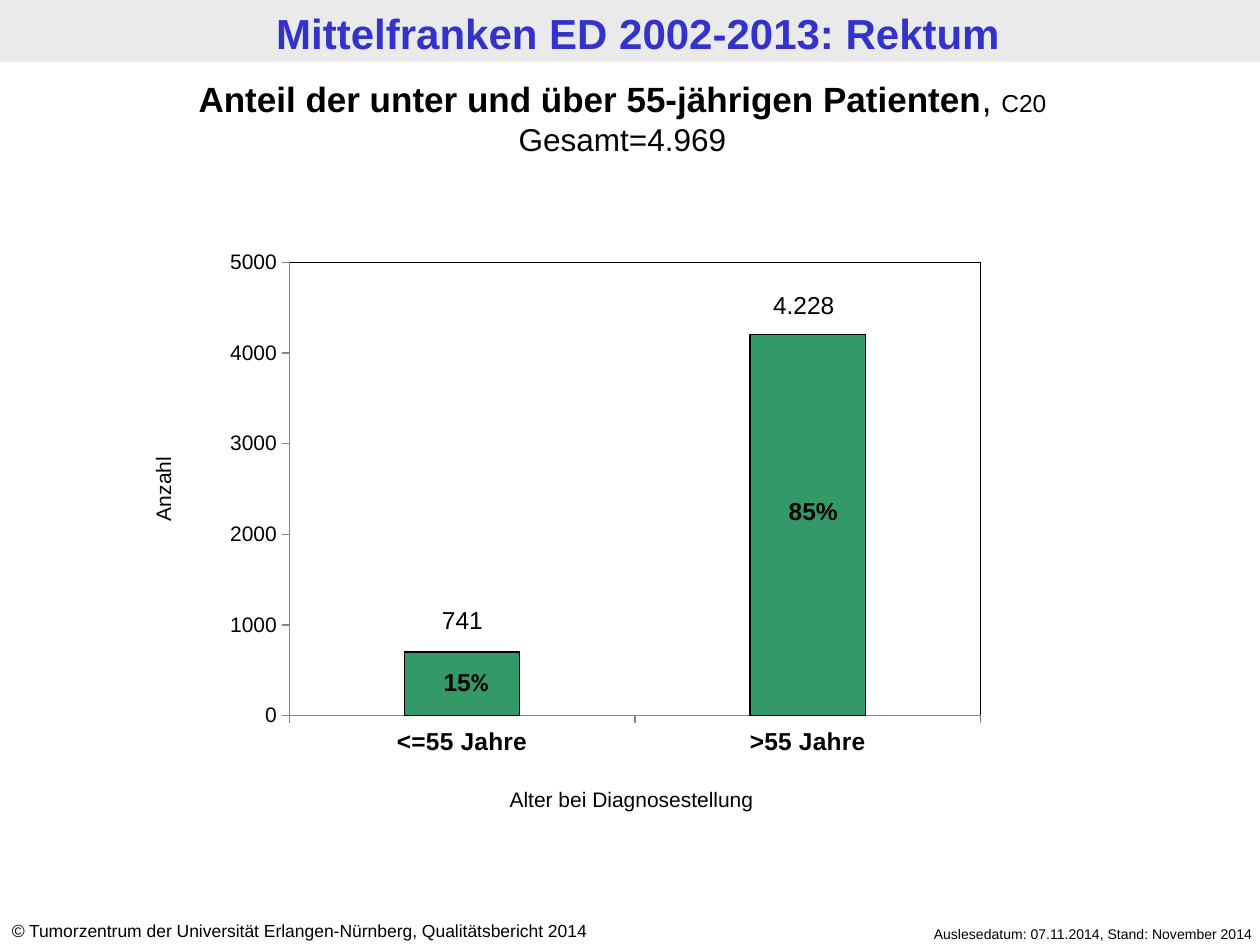
from pptx import Presentation
from pptx import util as u
from pptx.chart.data import CategoryChartData
from pptx.dml.color import RGBColor
from pptx.enum import chart as charts, shapes, text
from pptx.oxml import parse_xml
from pptx.oxml.ns import nsdecls, qn

Pt = u.Pt
LEFT, CENTER, RIGHT = text.PP_ALIGN.LEFT, text.PP_ALIGN.CENTER, text.PP_ALIGN.RIGHT
BLACK, GRAY = "000000", "868686"

# Each paragraph is a list of runs: (text, changes to the font of the box)
TEXTS = [
    # left, top, width, height, alignment, font, paragraphs
    (4.6, 0.7, 720, 35.3, CENTER, dict(size=24, bold=True, color="3333CC"),
     [[("Mittelfranken ED 2002-2013: Rektum", {})]]),
    (478.8, 525.2, 244.1, 17.3, RIGHT, dict(size=8),
     [[("Auslesedatum: 07.11.2014, Stand: November 2014", {})]]),
    (-0.4, 522.4, 377.3, 19.4, LEFT, dict(size=10),
     [[("©", dict(italic=True)),
       (" Tumorzentrum der Universität Erlangen-Nürnberg, Qualitätsbericht 2014", {})]]),
    (0, 41, 711.4, 53.3, CENTER, dict(size=20),
     [[("Anteil der unter und über 55-jährigen Patienten", dict(bold=True)),
       (", ", {}), ("C20", dict(size=14))],
      [("Gesamt=4.969", dict(size=18))]]),
    (229.7, 377.7, 73.4, 24.5, CENTER, dict(size=14, bold=True),
     [[("15", {}), ("%", dict(name="Calibri"))]]),
    (428, 280.1, 73.4, 24.5, CENTER, dict(size=14, bold=True), [[("85%", {})]]),
    (241, 445.7, 239.8, 21.6, CENTER, dict(size=12),
     [[("Alter bei Diagnosestellung", {})]]),
    (227.5, 342, 73.4, 24.5, CENTER, dict(size=14), [[("741", {})]]),
    (422.6, 162, 73.4, 24.5, CENTER, dict(size=14), [[("4.228", {})]]),
]
AXIS_TITLE = (-0.9, 268.6, 187.9, 21.6, CENTER, dict(size=12), [[("Anzahl", {})]])

CATEGORIES = ["<=55 Jahre", ">55 Jahre"]
COUNTS = [700, 4200]
CHART_FRAME = (108.5, 102.3, 502.6, 335.5)
PLOT = dict(x=0.113, y=0.142, w=0.786, h=0.772)  # shares of the chart frame


def rgb(value):
    return RGBColor.from_string(value)


def style_font(font, size=None, bold=None, italic=None, color=None, name=None):
    if size:
        font.size = Pt(size)
    if bold is not None:
        font.bold = bold
    if italic is not None:
        font.italic = italic
    if color:
        font.color.rgb = rgb(color)
    if name:
        font.name = name


def add_text(slide, left, top, width, height, alignment, font, paragraphs):
    box = slide.shapes.add_textbox(Pt(left), Pt(top), Pt(width), Pt(height))
    frame = box.text_frame
    frame.word_wrap = True
    base = {"name": "Arial", "color": BLACK, **font}
    for index, runs in enumerate(paragraphs):
        paragraph = frame.add_paragraph() if index else frame.paragraphs[0]
        paragraph.alignment = alignment
        style_font(paragraph.font, **base)
        for words, changes in runs:
            run = paragraph.add_run()
            run.text = words
            style_font(run.font, **changes)
    return box


def frame_plot(chart):
    """Fix the inner plot area and outline it in black."""
    plot_area = chart._chartSpace.chart.plotArea
    for old in plot_area.findall(qn("c:layout")):
        plot_area.remove(old)
    places = "".join(f'<c:{key} val="{value}"/>' for key, value in PLOT.items())
    plot_area.insert(0, parse_xml(
        f'<c:layout {nsdecls("c")}><c:manualLayout><c:layoutTarget val="inner"/>'
        f'<c:xMode val="edge"/><c:yMode val="edge"/>{places}'
        '</c:manualLayout></c:layout>'))
    plot_area.append(parse_xml(
        f'<c:spPr {nsdecls("c", "a")}><a:noFill/><a:ln w="9525"><a:solidFill>'
        f'<a:srgbClr val="{BLACK}"/></a:solidFill></a:ln></c:spPr>'))


def add_age_chart(slide):
    data = CategoryChartData()
    data.categories = CATEGORIES
    data.add_series("Series 1", COUNTS)
    chart = slide.shapes.add_chart(
        charts.XL_CHART_TYPE.COLUMN_STACKED, *map(Pt, CHART_FRAME), data).chart
    chart.has_legend = chart.has_title = False
    style_font(chart.font, size=18, color=BLACK, name="Calibri")

    plot = chart.plots[0]
    plot.gap_width, plot.overlap, plot.vary_by_categories = 200, 100, False
    series = plot.series[0].format
    series.fill.solid()
    series.fill.fore_color.rgb = rgb("339966")
    series.line.color.rgb = rgb(BLACK)
    series.line.width = Pt(0.75)

    for axis, size, bold in ((chart.category_axis, 14, True), (chart.value_axis, 12, False)):
        axis.has_major_gridlines = False
        axis.major_tick_mark = charts.XL_TICK_MARK.OUTSIDE
        axis.format.line.color.rgb = rgb(GRAY)
        axis.format.line.width = Pt(0.75)
        style_font(axis.tick_labels.font, size, bold, color=BLACK, name="Arial")
    values = chart.value_axis
    values.minimum_scale, values.maximum_scale, values.major_unit = 0, 5000, 1000
    frame_plot(chart)


def main():
    presentation = Presentation()
    presentation.slide_width, presentation.slide_height = Pt(720), Pt(540)
    slide = presentation.slides.add_slide(presentation.slide_layouts[6])

    band = slide.shapes.add_shape(
        shapes.MSO_SHAPE.RECTANGLE, Pt(0), Pt(0), Pt(720), Pt(35.3))
    band.shadow.inherit = False
    band.fill.solid()
    band.fill.fore_color.rgb = rgb("EAEAEA")
    band.line.fill.background()

    add_age_chart(slide)
    for entry in TEXTS:
        add_text(slide, *entry)
    add_text(slide, *AXIS_TITLE).rotation = 270
    presentation.save("out.pptx")


if __name__ == "__main__":
    main()
